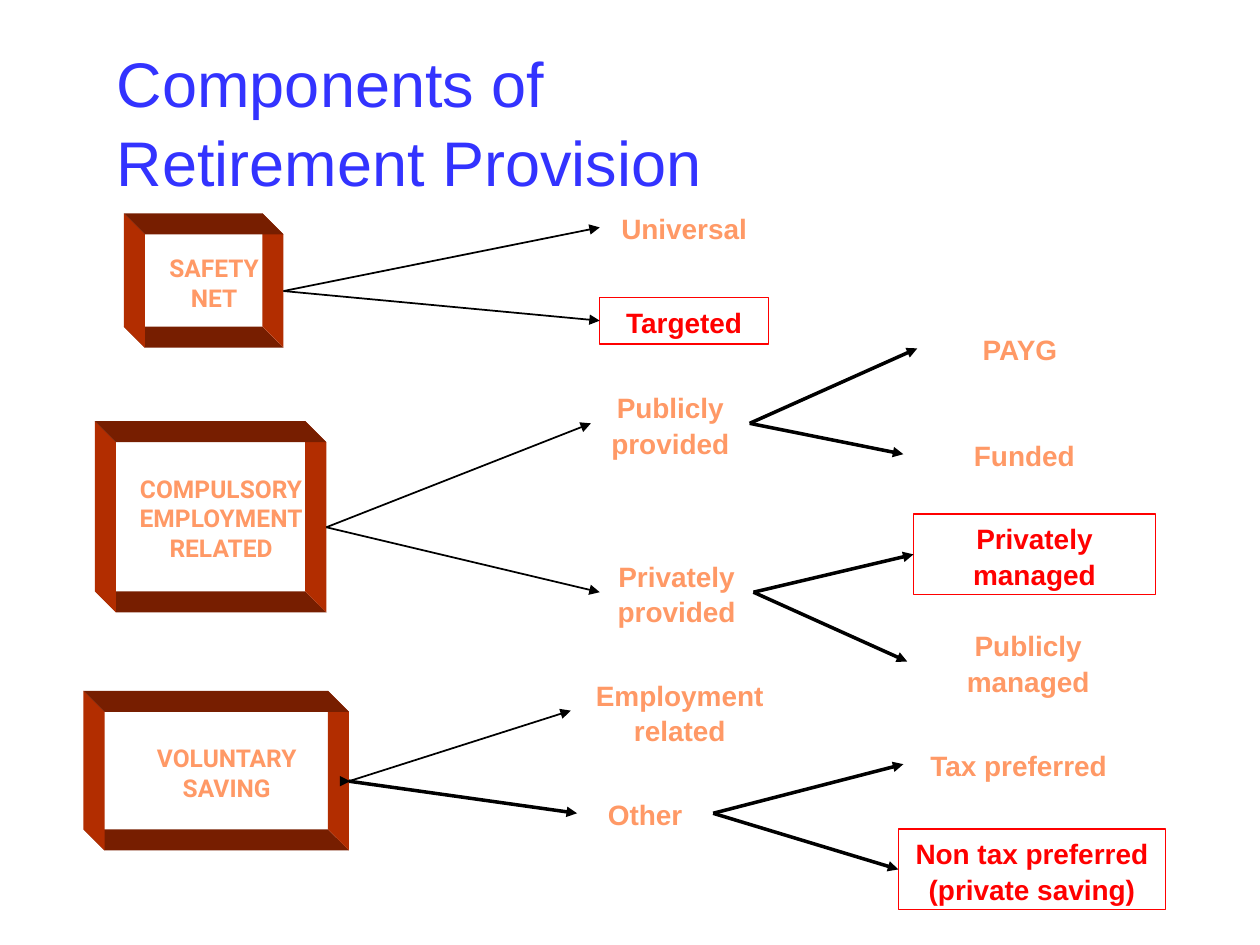
from lxml import etree
from pptx import Presentation
from pptx.dml.color import RGBColor
from pptx.enum.shapes import MSO_CONNECTOR, MSO_SHAPE
from pptx.enum.text import MSO_ANCHOR, PP_ALIGN
from pptx.oxml.ns import qn
from pptx.util import Inches, Pt

LEFT, CENTER = PP_ALIGN.LEFT, PP_ALIGN.CENTER
TOP, MIDDLE = MSO_ANCHOR.TOP, MSO_ANCHOR.MIDDLE
RECTANGLE, STRAIGHT = MSO_SHAPE.RECTANGLE, MSO_CONNECTOR.STRAIGHT
LEFT_SIDE, RIGHT_SIDE = 1, 3

COLOURS = {
    "title": "3333FF", "label": "FF9966", "chosen": "FF0000",
    "side": "B22D00", "edge": "771E00", "arrow": "000000",
}
COLOURS = {name: RGBColor.from_string(code) for name, code in COLOURS.items()}

# The slide is a grid of 100 columns by 75 rows
CELL = Inches(0.1)
DEPTH = 1.67


def grid(*cells):
    return [round(cell * CELL) for cell in cells]


def write(frame, paragraphs, font, size, colour, bold=True, align=CENTER, anchor=TOP, spacing=1.05):
    frame.word_wrap = True
    frame.vertical_anchor = anchor
    for number, text in enumerate(paragraphs):
        para = frame.add_paragraph() if number else frame.paragraphs[0]
        para.alignment = align
        para.line_spacing = spacing
        for row, words in enumerate(text.split("\n")):
            if row:
                para.add_line_break()
            span = para.add_run()
            span.text = words
            span.font.name = font
            span.font.size = Pt(size)
            span.font.bold = bold
            span.font.color.rgb = COLOURS[colour]


deck = Presentation()
deck.slide_width, deck.slide_height = grid(100, 75)
slide = deck.slides.add_slide(deck.slide_layouts[6])
shapes = slide.shapes

# Title
title = shapes.add_textbox(*grid(8.3, 3.6, 56.2, 11.8))
write(title.text_frame, ["Components of\nRetirement Provision"], "Arial", 36, "title",
      bold=False, align=LEFT, anchor=MIDDLE)

# Pillars: left, top, width, height, top inset, lines
pillars = {
    "safety": (11.5, 18.6, 11, 9, 1.5, ["SAFETY", "NET"]),
    "compulsory": (9.2, 35.1, 16.7, 13.5, 2.5, ["COMPULSORY", "EMPLOYMENT", "RELATED"]),
    "voluntary": (8.3, 56.5, 19.4, 11, 2.5, ["VOLUNTARY", "SAVING"]),
}
nodes = {}
for name, (left, top, width, height, inset, lines) in pillars.items():
    right, bottom = left + width, top + height
    front = [(left, top), (right, top), (right, bottom), (left, bottom)]
    back = [(x - DEPTH, y - DEPTH) for x, y in front]

    # Faces joining the back outline to the front one: bottom, right, left, top
    for start, colour in ((2, "edge"), (1, "side"), (3, "side"), (0, "edge")):
        end = (start + 1) % 4
        corners = [grid(*corner) for corner in (back[start], back[end], front[end], front[start])]
        builder = shapes.build_freeform(*corners[0])
        builder.add_line_segments(corners[1:], close=True)
        face = builder.convert_to_shape()
        face.shadow.inherit = False
        face.fill.solid()
        face.fill.fore_color.rgb = COLOURS[colour]
        face.line.fill.background()

    box = shapes.add_shape(RECTANGLE, *grid(left, top, width, height))
    box.shadow.inherit = False
    box.fill.background()
    box.line.fill.background()
    frame = box.text_frame
    frame.margin_left = frame.margin_right = frame.margin_bottom = Inches(0.01)
    frame.margin_top = grid(inset)[0]
    write(frame, lines, "Roboto", 14, "label", spacing=1.0)
    nodes[name] = box

# Branches: parent, name, text, left, top, width, rows of text, framed, arrow width
ONE, TWO = 3.7, 6.4
branches = [
    ("safety", "universal", "Universal", 47.6, 16.2, 13.4, ONE, False, 1),
    ("safety", "targeted", "Targeted", 47.6, 23.6, 13.4, ONE, True, 1),
    ("compulsory", "public", "Publicly provided", 46.9, 30.4, 12.6, TWO, False, 1),
    ("compulsory", "private", "Privately provided", 47.6, 43.8, 12.2, TWO, False, 1),
    ("voluntary", "employment", "Employment\nrelated", 45.3, 53.2, 17.3, TWO, False, 1),
    ("voluntary", "other", "Other", 45.8, 62.7, 10.8, ONE, False, 0),
    ("public", "payg", "PAYG", 72.8, 25.8, 16.3, ONE, False, 0),
    ("public", "funded", "Funded", 71.7, 34.2, 19.2, ONE, False, 0),
    ("private", "privately managed", "Privately managed", 72.5, 40.8, 19.2, TWO, True, 0),
    ("private", "publicly managed", "Publicly managed", 72, 49.3, 19.2, TWO, False, 0),
    ("other", "tax", "Tax preferred", 71.7, 58.8, 18.3, ONE, False, 0),
    ("other", "non tax", "Non tax preferred (private saving)", 71.3, 65.8, 21.2, TWO, True, 0),
]
for parent, name, text, left, top, width, height, framed, weight in branches:
    place = grid(left, top, width, height)
    if framed:
        label = shapes.add_shape(RECTANGLE, *place)
        label.shadow.inherit = False
        label.fill.background()
        label.line.color.rgb = COLOURS["chosen"]
        label.line.width = Pt(0)
    else:
        label = shapes.add_textbox(*place)
    write(label.text_frame, [text], "Arial", 16, "chosen" if framed else "label")
    nodes[name] = label

# Arrows, with a short stub at the voluntary pillar
arrows = [(branch[0], branch[1], branch[-1]) for branch in branches]
for parent, child, weight in [("voluntary", None, 1)] + arrows:
    arrow = shapes.add_connector(STRAIGHT, *grid(27.7, 62, 27.8, 62))
    arrow.begin_connect(nodes[parent], RIGHT_SIDE)
    if child:
        arrow.end_connect(nodes[child], LEFT_SIDE)
    arrow.line.color.rgb = COLOURS["arrow"]
    arrow.line.width = Pt(weight)
    outline = arrow.line._get_or_add_ln()
    etree.SubElement(outline, qn("a:tailEnd"), type="triangle")
    etree.SubElement(arrow._element.spPr, qn("a:effectLst"))

deck.save("out.pptx")
